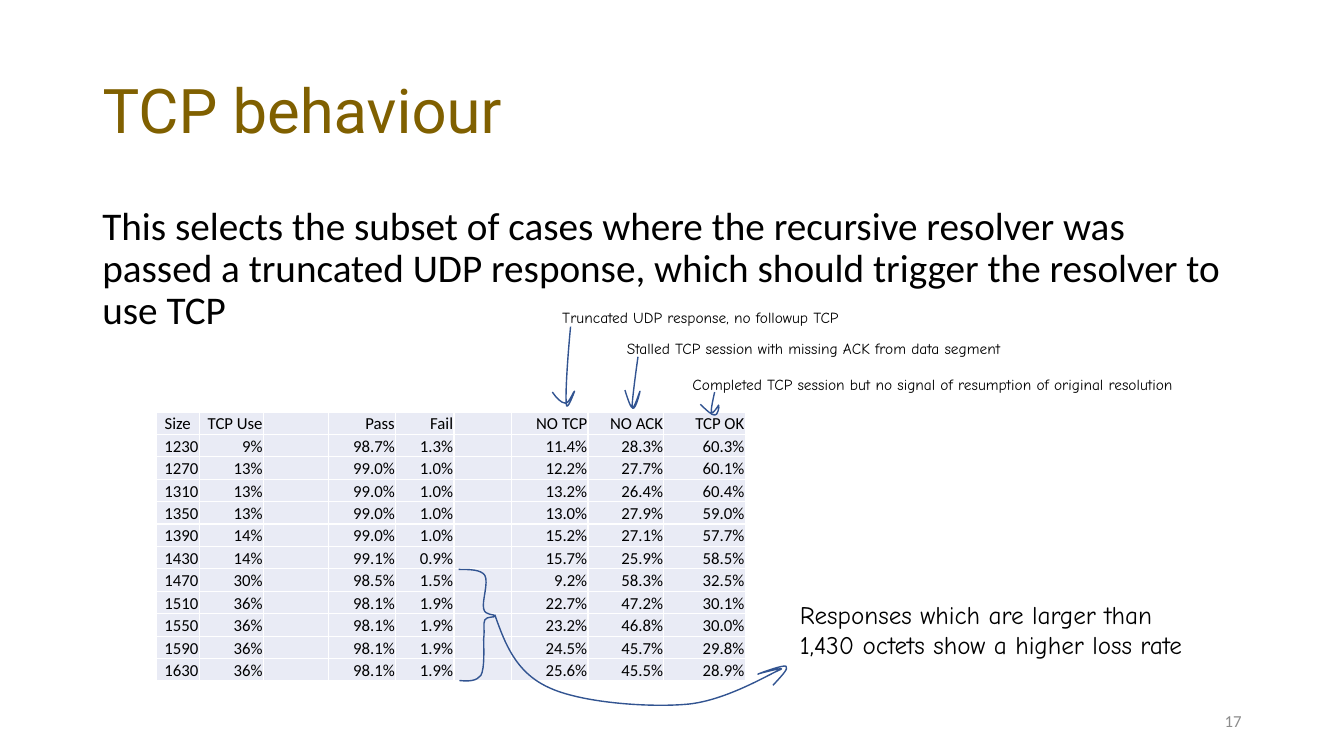
from lxml.etree import SubElement
from pptx import Presentation
from pptx.dml.color import RGBColor
from pptx.enum.text import MSO_ANCHOR, PP_ALIGN
from pptx.oxml.ns import qn
from pptx.util import Cm, Pt

TITLE = "TCP behaviour"
BODY = ("This selects the subset of cases where the recursive resolver was passed a truncated "
        "UDP response, which should trigger the resolver to use TCP")
CONCLUSION = "Responses which are larger than 1,430 octets show a higher loss rate"
PAGE_NUMBER = "17"

HEADER = ("Size", "TCP Use", "", "Pass", "Fail", "", "NO TCP", "NO ACK", "TCP OK")
RESULTS = [
    ("1230", "9%", "", "98.7%", "1.3%", "", "11.4%", "28.3%", "60.3%"),
    ("1270", "13%", "", "99.0%", "1.0%", "", "12.2%", "27.7%", "60.1%"),
    ("1310", "13%", "", "99.0%", "1.0%", "", "13.2%", "26.4%", "60.4%"),
    ("1350", "13%", "", "99.0%", "1.0%", "", "13.0%", "27.9%", "59.0%"),
    ("1390", "14%", "", "99.0%", "1.0%", "", "15.2%", "27.1%", "57.7%"),
    ("1430", "14%", "", "99.1%", "0.9%", "", "15.7%", "25.9%", "58.5%"),
    ("1470", "30%", "", "98.5%", "1.5%", "", "9.2%", "58.3%", "32.5%"),
    ("1510", "36%", "", "98.1%", "1.9%", "", "22.7%", "47.2%", "30.1%"),
    ("1550", "36%", "", "98.1%", "1.9%", "", "23.2%", "46.8%", "30.0%"),
    ("1590", "36%", "", "98.1%", "1.9%", "", "24.5%", "45.7%", "29.8%"),
    ("1630", "36%", "", "98.1%", "1.9%", "", "25.6%", "45.5%", "28.9%"),
]
COLUMN_WIDTHS = (1.08, 1.62, 1.63, 1.7, 1.47, 1.45, 1.93, 1.91, 2.05)
TABLE_LEFT, TABLE_TOP, TABLE_HEIGHT = 3.94, 10.38, 6.78

COLUMN_NOTES = [
    ("Truncated UDP response, no followup TCP", 13.92, 7.65, 9.37),
    ("Stalled TCP session with missing ACK from data segment", 15.55, 8.43, 12.85),
    ("Completed TCP session but no signal of resumption of original resolution", 17.2, 9.32, 15.9),
]

BRACE = [
    (11.56, 14.35), (11.84, 14.35), (12.12, 14.35), (12.22, 14.5),
    (12.32, 14.68), (12.14, 15.16), (12.19, 15.34),
    (12.22, 15.52), (12.47, 15.47), (12.47, 15.52),
    (12.5, 15.57), (12.27, 15.52), (12.22, 15.62),
    (12.17, 15.72), (12.22, 15.85), (12.19, 16.1),
    (12.19, 16.33), (12.22, 16.84), (12.12, 17.02),
    (12.01, 17.17), (11.79, 17.17), (11.58, 17.15),
]
ARROW_TO_CONCLUSION = [
    (12.47, 15.49), (12.73, 16.23), (13, 16.94), (13.82, 17.32),
    (14.61, 17.7), (16.28, 17.83), (17.27, 17.75),
    (18.24, 17.68), (19.33, 17.02), (19.63, 16.89),
    (19.94, 16.76), (19.05, 16.99), (19.1, 16.99),
    (19.13, 16.97), (19.76, 16.74), (19.81, 16.79),
    (19.89, 16.84), (19.69, 17.04), (19.48, 17.27),
]
ARROW_TO_NO_TCP = [
    (14.38, 8.23), (14.3, 9.07), (14.25, 9.88), (14.27, 10.16),
    (14.27, 10.44), (14.48, 9.86), (14.48, 9.86),
    (14.45, 9.86), (14.35, 10.16), (14.25, 10.16),
    (14.15, 10.16), (14.02, 10.03), (13.92, 9.88),
]
ARROW_TO_NO_ACK = [
    (16.08, 8.99), (16, 9.55), (15.93, 10.11), (15.93, 10.26),
    (15.95, 10.41), (16.13, 9.83), (16.13, 9.86),
    (16.13, 9.86), (16.03, 10.31), (15.95, 10.29),
    (15.9, 10.29), (15.82, 10.06), (15.75, 9.83),
]
ARROW_TO_TCP_OK = [
    (18.01, 9.88), (17.96, 10.11), (17.91, 10.34), (17.93, 10.39),
    (17.96, 10.46), (18.11, 10.21), (18.11, 10.21),
    (18.14, 10.24), (18.08, 10.49), (18.01, 10.46),
    (17.93, 10.46), (17.81, 10.34), (17.65, 10.19),
]
PEN_STROKES = [BRACE, ARROW_TO_CONCLUSION, ARROW_TO_NO_TCP, ARROW_TO_NO_ACK, ARROW_TO_TCP_OK]

GOLD = RGBColor(0x80, 0x60, 0x00)
BLACK = RGBColor(0x00, 0x00, 0x00)
GREY = RGBColor(0x8C, 0x8C, 0x8C)
PALE_BLUE = RGBColor(0xE9, 0xEB, 0xF5)
PEN_BLUE = RGBColor(0x32, 0x54, 0x91)


def format_paragraph(paragraph, font_name, size, color=BLACK, alignment=PP_ALIGN.LEFT):
    """Set the font and alignment of a whole paragraph."""
    paragraph.alignment = alignment
    paragraph.font.name = font_name
    paragraph.font.size = Pt(size)
    paragraph.font.color.rgb = color


def add_text(slide, text, left, top, width, height, font_name, size, **style):
    """Add a wrapped text box with one paragraph and return its text frame."""
    frame = slide.shapes.add_textbox(Cm(left), Cm(top), Cm(width), Cm(height)).text_frame
    frame.word_wrap = True
    frame.text = text
    format_paragraph(frame.paragraphs[0], font_name, size, **style)
    return frame


def add_title(slide):
    """Place and format the title placeholder."""
    title = slide.shapes.title
    title.left, title.top, title.width, title.height = Cm(2.33), Cm(1.01), Cm(29.21), Cm(3.68)
    title.text_frame.text = TITLE
    title.text_frame.vertical_anchor = MSO_ANCHOR.MIDDLE
    paragraph = title.text_frame.paragraphs[0]
    format_paragraph(paragraph, "Roboto", 44, GOLD)
    paragraph.line_spacing = 0.9


def add_results_table(slide):
    """Add the table of TCP results by response size."""
    rows = [HEADER, *RESULTS]
    table = slide.shapes.add_table(
        len(rows), len(HEADER), Cm(TABLE_LEFT), Cm(TABLE_TOP),
        Cm(sum(COLUMN_WIDTHS)), Cm(TABLE_HEIGHT)).table
    table.first_row = table.horz_banding = False
    for column, width in zip(table.columns, COLUMN_WIDTHS):
        column.width = Cm(width)
    for row_index, values in enumerate(rows):
        for column_index, value in enumerate(values):
            cell = table.cell(row_index, column_index)
            cell.text = value
            cell.fill.solid()
            cell.fill.fore_color.rgb = PALE_BLUE
            cell.vertical_anchor = MSO_ANCHOR.BOTTOM
            cell.margin_left = cell.margin_right = cell.margin_top = Cm(0.02)
            cell.margin_bottom = 0
            alignment = PP_ALIGN.CENTER if value == "Size" else PP_ALIGN.RIGHT
            format_paragraph(cell.text_frame.paragraphs[0], "Calibri", 12, alignment=alignment)


def add_pen_stroke(slide, controls):
    """Draw one open pen line through a chain of cubic Bezier control points."""
    start, *others = [(Cm(x), Cm(y)) for x, y in controls]
    builder = slide.shapes.build_freeform(*start)
    builder.add_line_segments(others, close=False)
    stroke = builder.convert_to_shape()
    outline = next(stroke.element.iter(qn("a:path")))
    segments = outline.findall(qn("a:lnTo"))
    for first in range(0, len(segments), 3):
        curve = SubElement(outline, qn("a:cubicBezTo"))
        for segment in segments[first:first + 3]:
            curve.append(segment[0])
            outline.remove(segment)
    stroke.shadow.inherit = False
    stroke.fill.background()
    stroke.line.color.rgb = PEN_BLUE
    stroke.line.width = Pt(1)


def main():
    """Build the slide and save it."""
    presentation = Presentation()
    presentation.slide_width, presentation.slide_height = Cm(33.87), Cm(19.05)
    slide = presentation.slides.add_slide(presentation.slide_layouts[5])
    add_title(slide)
    body = add_text(slide, BODY, 2.33, 5.07, 29.21, 12.09, "Calibri", 28)
    body.paragraphs[0].line_spacing = 0.9
    body.paragraphs[0].space_before = Pt(10)
    add_text(slide, CONCLUSION, 19.91, 14.97, 10.92, 2.57, "Comic Neue", 18)
    add_results_table(slide)
    for text, left, top, width in COLUMN_NOTES:
        add_text(slide, text, left, top, width, 0.74, "Comic Neue", 11)
    for controls in PEN_STROKES:
        add_pen_stroke(slide, controls)
    number = add_text(slide, PAGE_NUMBER, 23.92, 17.65, 7.62, 1.02, "Calibri", 12,
                      color=GREY, alignment=PP_ALIGN.RIGHT)
    number.vertical_anchor = MSO_ANCHOR.MIDDLE
    presentation.save("out.pptx")


if __name__ == "__main__":
    main()
